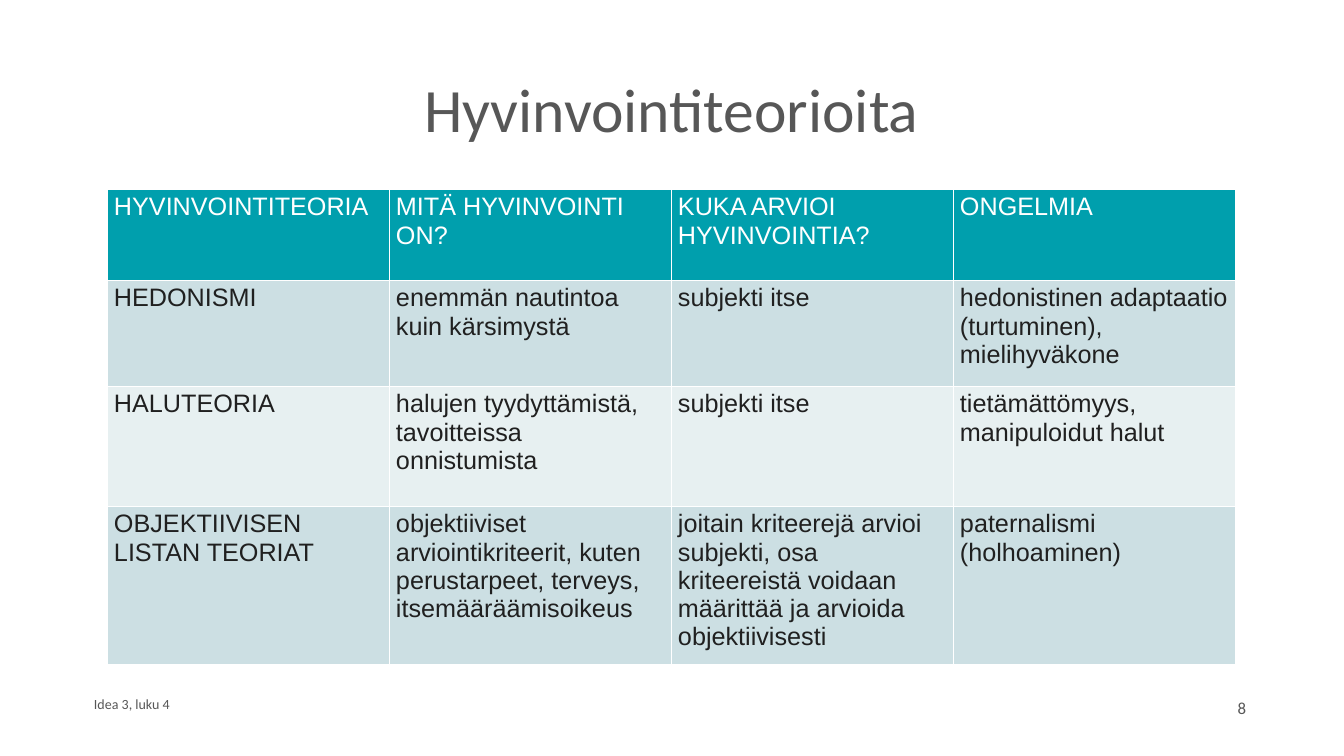
from pptx import Presentation
from pptx.dml.color import RGBColor
from pptx.enum.text import MSO_ANCHOR as Anchor, MSO_AUTO_SIZE as Fit, PP_ALIGN as Align
from pptx.util import Pt

TITLE = "Hyvinvointiteorioita"
FOOTER = "Idea 3, luku 4"
NUMBER = "8"
ROWS = [
    ("HYVINVOINTITEORIA", "MITÄ HYVINVOINTI ON?",
     "KUKA ARVIOI HYVINVOINTIA?", "ONGELMIA"),
    ("HEDONISMI", "enemmän nautintoa kuin kärsimystä", "subjekti itse",
     "hedonistinen adaptaatio (turtuminen), mielihyväkone"),
    ("HALUTEORIA", "halujen tyydyttämistä, tavoitteissa onnistumista",
     "subjekti itse", "tietämättömyys, manipuloidut halut"),
    ("OBJEKTIIVISEN LISTAN TEORIAT",
     "objektiiviset arviointikriteerit, kuten perustarpeet, terveys, itsemääräämisoikeus",
     "joitain kriteerejä arvioi subjekti, osa kriteereistä voidaan määrittää "
     "ja arvioida objektiivisesti",
     "paternalismi (holhoaminen)"),
]
HEIGHTS = [91, 106, 120, 148]
COL = 282

GREY = RGBColor(0x57, 0x57, 0x57)
WHITE = RGBColor(0xFF, 0xFF, 0xFF)
DARK = RGBColor(0x20, 0x20, 0x20)
TEAL = RGBColor(0x00, 0x9F, 0xAD)
BANDS = [RGBColor(0xE7, 0xF0, 0xF1), RGBColor(0xCC, 0xDF, 0xE3)]


def px(n):
    return n * 18143


def place(shape, left, top, width, height):
    shape.left, shape.top = px(left), px(top)
    shape.width, shape.height = px(width), px(height)


def write(frame, text, size, color, font="Calibri", align=Align.LEFT):
    frame.text = text
    frame.word_wrap = True
    para = frame.paragraphs[0]
    para.alignment = align
    run = para.runs[0].font
    run.name, run.size, run.bold = font, Pt(size), False
    run.color.rgb = color


def add_note(slide, box, text, size, align):
    note = slide.shapes.add_textbox(*map(px, box))
    write(note.text_frame, text, size, GREY, align=align)
    note.text_frame.vertical_anchor = Anchor.BOTTOM


def add_grid(slide):
    shape = slide.shapes.add_table(len(ROWS), len(ROWS[0]), px(107), px(189),
                                   px(COL * len(ROWS[0])), px(sum(HEIGHTS)))
    table = shape.table
    for col in table.columns:
        col.width = px(COL)
    for r, texts in enumerate(ROWS):
        table.rows[r].height = px(HEIGHTS[r])
        for c, text in enumerate(texts):
            cell = table.cell(r, c)
            cell.margin_left = cell.margin_right = px(7)
            cell.margin_top, cell.margin_bottom = px(4), px(3)
            cell.fill.solid()
            cell.fill.fore_color.rgb = BANDS[r % 2] if r else TEAL
            write(cell.text_frame, text, 36, DARK if r else WHITE, "Arial")


def main():
    prs = Presentation()
    prs.slide_width, prs.slide_height = px(1344), px(756)
    slide = prs.slides.add_slide(prs.slide_layouts[5])

    title = slide.shapes.title
    place(title, 92, 40, 1159, 146)
    frame = title.text_frame
    write(frame, TITLE, 88, GREY, align=Align.CENTER)
    frame.auto_size = Fit.NONE
    frame.vertical_anchor = Anchor.MIDDLE
    frame.paragraphs[0].line_spacing = 0.9

    add_note(slide, (949, 680, 302, 40), NUMBER, 24, Align.RIGHT)
    add_note(slide, (89, 675, 454, 40), FOOTER, 20, Align.LEFT)
    add_grid(slide)
    prs.save("out.pptx")


if __name__ == "__main__":
    main()
